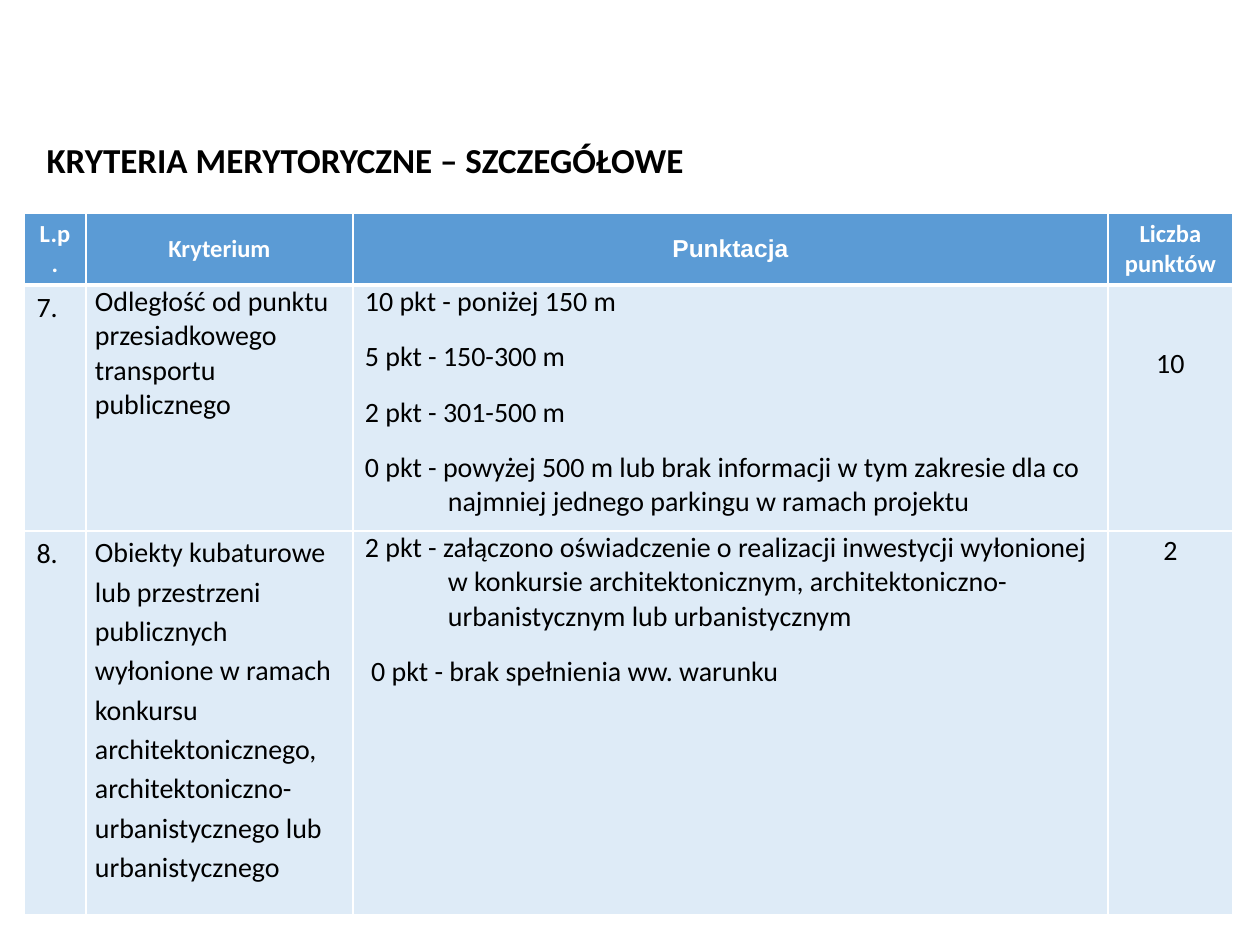
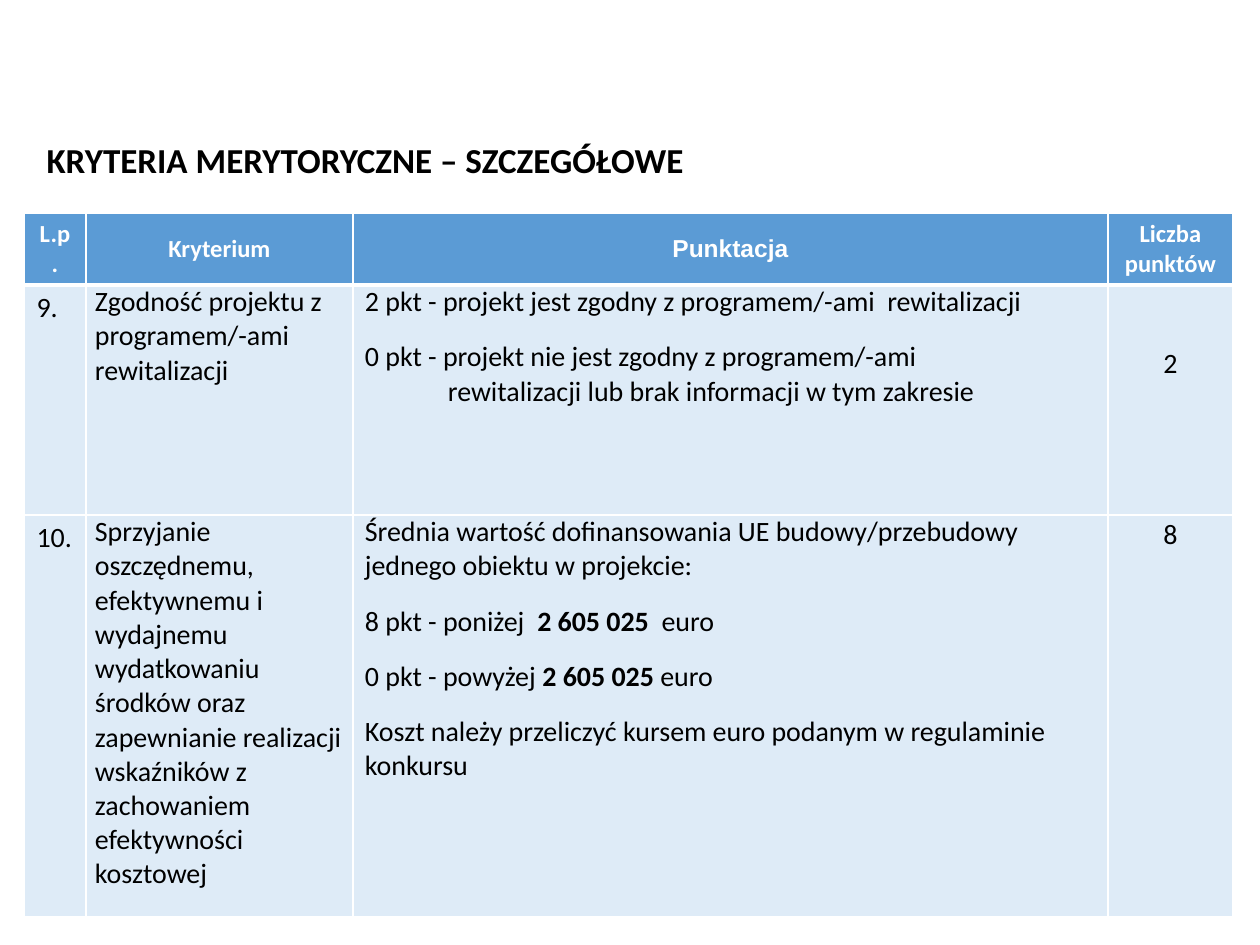
from dataclasses import dataclass

import pptx
import pptx.dml.color
import pptx.enum.text
import pptx.oxml
import pptx.oxml.ns
import pptx.presentation
import pptx.slide
import pptx.table
import pptx.text.text
import pptx.util

PIXELS_PER_INCH = 126
SLIDE_WIDTH, SLIDE_HEIGHT = 1260, 945
TABLE_LEFT, TABLE_TOP = 24, 213
COLUMN_WIDTHS = (62, 267, 755, 125)
HEADER_HEIGHT = 72
SCORE_MARGIN, HANGING_MARGIN = 12, 95
TITLE = "KRYTERIA MERYTORYCZNE – SZCZEGÓŁOWE"

WHITE = pptx.dml.color.RGBColor(0xFF, 0xFF, 0xFF)
BLACK = pptx.dml.color.RGBColor(0x00, 0x00, 0x00)
HEADER_BLUE = pptx.dml.color.RGBColor(0x5B, 0x9B, 0xD5)
BODY_BLUE = pptx.dml.color.RGBColor(0xDE, 0xEB, 0xF7)

MIDDLE = pptx.enum.text.MSO_ANCHOR.MIDDLE
LEFT = pptx.enum.text.PP_ALIGN.LEFT
CENTER = pptx.enum.text.PP_ALIGN.CENTER


@dataclass(frozen=True)
class TextStyle:
    size: int
    color: pptx.dml.color.RGBColor = BLACK
    bold: bool = False
    font: str = "Calibri"


@dataclass(frozen=True)
class TextRun:
    text: str
    bold: bool = False


@dataclass(frozen=True)
class ScoreLine:
    runs: tuple[TextRun, ...]
    hanging: bool = True


@dataclass(frozen=True)
class Criterion:
    number: str
    name: tuple[str, ...]
    scores: tuple[ScoreLine, ...]
    points: str
    height: int
    points_top: int = 0
    name_spacing: float = 1.0


@dataclass(frozen=True)
class HeaderCell:
    text: str
    font: str = "Calibri"


TITLE_STYLE = TextStyle(20, bold=True)
BODY_STYLE = TextStyle(16)
HEADERS = (
    HeaderCell("L.p."),
    HeaderCell("Kryterium"),
    HeaderCell("Punktacja", "Arial"),
    HeaderCell("Liczba punktów"),
)


def score(text: str, hanging: bool = True) -> ScoreLine:
    return ScoreLine((TextRun(text),), hanging)


CRITERIA_BY_SLIDE = (
    (
        Criterion(
            "7.",
            ("Odległość od punktu przesiadkowego", "transportu publicznego"),
            (
                score("10 pkt - poniżej 150 m"),
                score("5 pkt - 150-300 m"),
                score("2 pkt - 301-500 m"),
                score("0 pkt - powyżej 500 m lub brak informacji w tym zakresie dla co\n"
                      "najmniej jednego parkingu w ramach projektu"),
            ),
            "10", height=246, points_top=57,
        ),
        Criterion(
            "8.",
            ("Obiekty kubaturowe lub przestrzeni publicznych wyłonione w ramach konkursu "
             "architektonicznego, architektoniczno-urbanistycznego lub urbanistycznego",),
            (
                score("2 pkt - załączono oświadczenie o realizacji inwestycji wyłonionej\n"
                      "w konkursie architektonicznym, architektoniczno-\n"
                      "urbanistycznym lub urbanistycznym"),
                score(" 0 pkt - brak spełnienia ww. warunku"),
            ),
            "2", height=384, name_spacing=1.15,
        ),
    ),
    (
        Criterion(
            "9.",
            ("Zgodność projektu z programem/-ami rewitalizacji",),
            (
                score("2 pkt - projekt jest zgodny z programem/-ami  rewitalizacji"),
                score("0 pkt - projekt nie jest zgodny z programem/-ami\n"
                      "rewitalizacji lub brak informacji w tym zakresie"),
            ),
            "2", height=230, points_top=57,
        ),
        Criterion(
            "10.",
            ("Sprzyjanie oszczędnemu, efektywnemu i wydajnemu wydatkowaniu środków oraz "
             "zapewnianie realizacji wskaźników z zachowaniem efektywności kosztowej",),
            (
                score("Średnia wartość dofinansowania UE budowy/przebudowy "
                      "jednego obiektu w projekcie:", hanging=False),
                ScoreLine((TextRun("8 pkt - poniżej  "), TextRun("2 605 025 ", True),
                           TextRun(" euro"))),
                ScoreLine((TextRun("0 pkt - powyżej "), TextRun("2 605 025 ", True),
                           TextRun("euro"))),
                score("Koszt należy przeliczyć kursem euro podanym w regulaminie konkursu",
                      hanging=False),
            ),
            "8", height=402,
        ),
    ),
)


def px(value: int) -> pptx.util.Emu:
    return pptx.util.Emu(round(value * 914400 / PIXELS_PER_INCH))


def add_text(paragraph: pptx.text.text._Paragraph, text: str, style: TextStyle,
             bold: bool = False) -> None:
    for index, line in enumerate(text.split("\n")):
        if index:
            paragraph.add_line_break()
        run = paragraph.add_run()
        run.text = line
        run.font.name = style.font
        run.font.size = pptx.util.Pt(style.size)
        run.font.bold = style.bold or bold
        run.font.color.rgb = style.color


def next_paragraph(frame: pptx.text.text.TextFrame, index: int) -> pptx.text.text._Paragraph:
    return frame.add_paragraph() if index else frame.paragraphs[0]


def set_margins(cell: pptx.table._Cell, side: int, top: int = 0) -> None:
    cell.margin_left = cell.margin_right = px(side)
    cell.margin_top = px(top)
    cell.margin_bottom = 0


def format_cell(cell: pptx.table._Cell, fill: pptx.dml.color.RGBColor,
                top_width: int, bottom_width: int) -> None:
    cell.fill.solid()
    cell.fill.fore_color.rgb = fill
    properties = cell._tc.get_or_add_tcPr()
    widths = {"lnL": 1, "lnR": 1, "lnT": top_width, "lnB": bottom_width}
    for position, (tag, width) in enumerate(widths.items()):
        border = pptx.oxml.parse_xml(
            f'<a:{tag} {pptx.oxml.ns.nsdecls("a")} w="{pptx.util.Pt(width)}">'
            f'<a:solidFill><a:srgbClr val="{WHITE}"/></a:solidFill></a:{tag}>'
        )
        properties.insert(position, border)


def fill_header(table: pptx.table.Table) -> None:
    for column, header in enumerate(HEADERS):
        cell = table.cell(0, column)
        format_cell(cell, HEADER_BLUE, top_width=1, bottom_width=3)
        cell.vertical_anchor = MIDDLE
        paragraph = cell.text_frame.paragraphs[0]
        paragraph.alignment = CENTER
        add_text(paragraph, header.text, TextStyle(14, WHITE, True, header.font))


def fill_scores(cell: pptx.table._Cell, scores: tuple[ScoreLine, ...]) -> None:
    set_margins(cell, 0)
    for index, line in enumerate(scores):
        paragraph = next_paragraph(cell.text_frame, index)
        margin = HANGING_MARGIN if line.hanging else SCORE_MARGIN
        properties = paragraph._p.get_or_add_pPr()
        properties.set("marL", str(px(margin)))
        properties.set("indent", str(px(SCORE_MARGIN - margin)))
        paragraph.space_before = pptx.util.Pt(6 if index else 0)
        paragraph.space_after = pptx.util.Pt(6)
        for run in line.runs:
            add_text(paragraph, run.text, BODY_STYLE, run.bold)


def fill_criterion(table: pptx.table.Table, row: int, criterion: Criterion) -> None:
    table.rows[row].height = px(criterion.height)
    number_cell, name_cell, score_cell, points_cell = table.rows[row].cells
    for cell in (number_cell, name_cell, score_cell, points_cell):
        format_cell(cell, BODY_BLUE, top_width=3 if row == 1 else 1, bottom_width=1)

    add_text(number_cell.text_frame.paragraphs[0], criterion.number, BODY_STYLE)

    set_margins(name_cell, 9)
    for index, text in enumerate(criterion.name):
        paragraph = next_paragraph(name_cell.text_frame, index)
        paragraph.line_spacing = criterion.name_spacing
        add_text(paragraph, text, BODY_STYLE)

    fill_scores(score_cell, criterion.scores)

    set_margins(points_cell, 0, criterion.points_top)
    paragraph = points_cell.text_frame.paragraphs[0]
    paragraph.alignment = CENTER
    paragraph.line_spacing = 1.15 if criterion.points_top else 1.07
    add_text(paragraph, criterion.points, BODY_STYLE)


def format_title(slide: pptx.slide.Slide) -> None:
    title = slide.shapes.title
    title.left, title.top, title.width, title.height = px(34), px(132), px(668), px(55)
    frame = title.text_frame
    frame.word_wrap = False
    frame.auto_size = pptx.enum.text.MSO_AUTO_SIZE.SHAPE_TO_FIT_TEXT
    frame.vertical_anchor = MIDDLE
    paragraph = frame.paragraphs[0]
    paragraph.alignment = LEFT
    add_text(paragraph, TITLE, TITLE_STYLE)


def add_criteria_slide(presentation: pptx.presentation.Presentation,
                       criteria: tuple[Criterion, ...]) -> None:
    slide = presentation.slides.add_slide(presentation.slide_layouts.get_by_name("Title Only"))
    format_title(slide)
    height = HEADER_HEIGHT + sum(criterion.height for criterion in criteria)
    table = slide.shapes.add_table(
        len(criteria) + 1, len(COLUMN_WIDTHS),
        px(TABLE_LEFT), px(TABLE_TOP), px(sum(COLUMN_WIDTHS)), px(height),
    ).table
    table.horz_banding = False
    for column, width in zip(table.columns, COLUMN_WIDTHS):
        column.width = px(width)
    table.rows[0].height = px(HEADER_HEIGHT)
    fill_header(table)
    for row, criterion in enumerate(criteria, start=1):
        fill_criterion(table, row, criterion)


def main() -> None:
    presentation = pptx.Presentation()
    presentation.slide_width = px(SLIDE_WIDTH)
    presentation.slide_height = px(SLIDE_HEIGHT)
    for criteria in CRITERIA_BY_SLIDE:
        add_criteria_slide(presentation, criteria)
    presentation.save("out.pptx")


if __name__ == "__main__":
    main()
